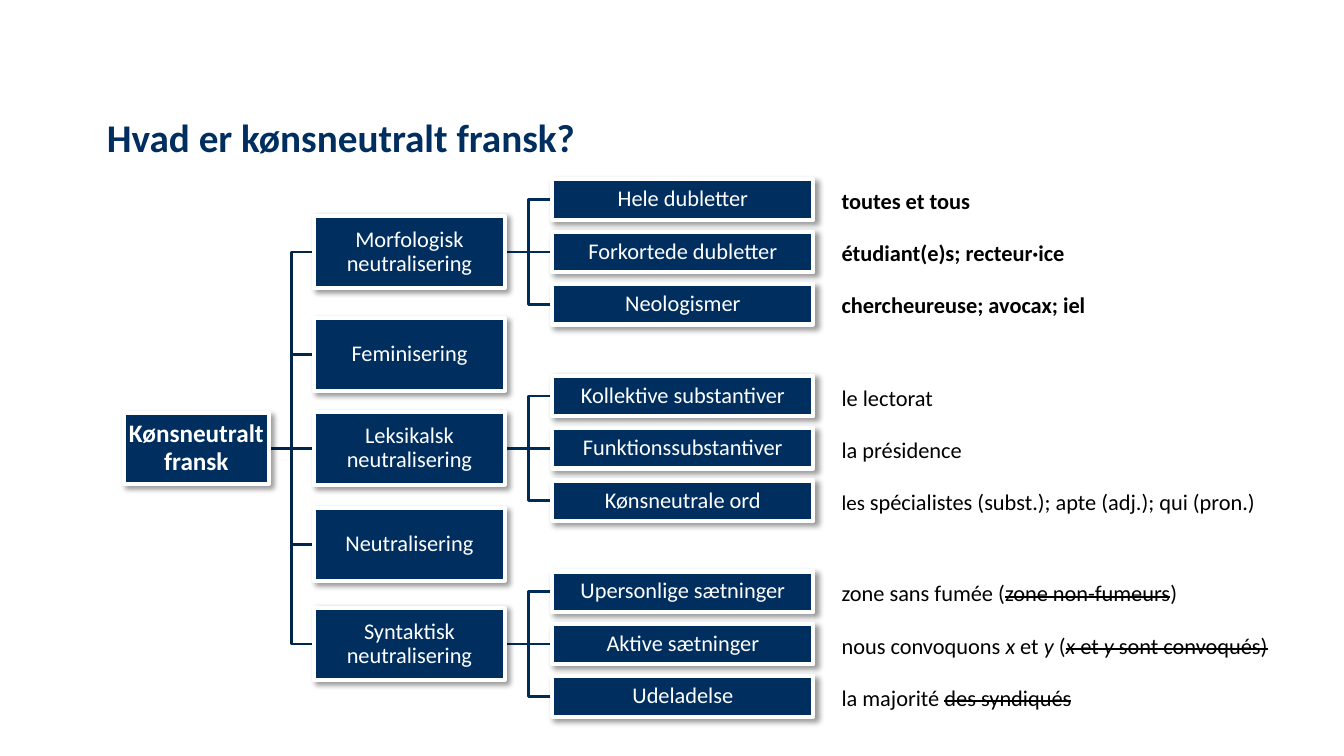
from lxml import etree
from pptx import Presentation, util as u
from pptx.dml.color import RGBColor
from pptx.enum import shapes, text
from pptx.oxml import ns

COLORS = {"navy": "002F5F", "trunk": "00264C", "twig": "002B56",
          "white": "FFFFFF", "black": "000000"}
STRUCK = {"strike": True}
ITALIC = {"italic": True}
STRUCK_ITALIC = {"strike": True, "italic": True}

# Branches: label, vertical centre in cm, leaves, examples, example format.
# An example is a list of (text, format) runs.
BRANCHES = [
    ("Morfologisk neutralisering", 6.35,
     ["Hele dubletter", "Forkortede dubletter", "Neologismer"],
     [[("toutes et tous", {})],
      [("étudiant(e)s; recteur·ice", {})],
      [("chercheureuse; avocax; iel", {})]], {"bold": True}),
    ("Feminisering", 8.93, [], [], {}),
    ("Leksikalsk neutralisering", 11.3,
     ["Kollektive substantiver", "Funktionssubstantiver", "Kønsneutrale ord"],
     [[("le lectorat", {})],
      [("la présidence", {})],
      [("les ", {"size": 15}),
       ("spécialistes (subst.); apte (adj.); qui (pron.)", {})]], {}),
    ("Neutralisering", 13.72, [], [], {}),
    ("Syntaktisk neutralisering", 16.23,
     ["Upersonlige sætninger", "Aktive sætninger", "Udeladelse"],
     [[("zone sans fumée (", {}), ("zone non-fumeurs", STRUCK), (")", {})],
      [("nous convoquons ", {}), ("x", ITALIC), (" et ", {}), ("y ", ITALIC),
       ("(", {}), ("x", STRUCK_ITALIC), (" et ", STRUCK),
       ("y", STRUCK_ITALIC), (" sont convoqués)", STRUCK)],
      [("la majorité ", {}), ("des syndiqués", STRUCK)]], {}),
]
# Tree columns: left, width, height in cm
ROOT, BRANCH, LEAF = (3.12, 3.66, 1.78), (7.92, 4.8, 1.83), (13.92, 6.58, 1.02)
LEAF_PITCH = 1.32


def rgb(name):
    return RGBColor.from_string(COLORS[name])


def write(paragraph, words, size=16, color="black", bold=False, italic=False,
          strike=False):
    run = paragraph.add_run()
    run.text = words
    font = run.font
    font.name, font.size = "Calibri", u.Pt(size)
    font.bold, font.italic = bold, italic
    font.color.rgb = rgb(color)
    if strike:
        run._r.get_or_add_rPr().set("strike", "sngStrike")


class TreeSlide:
    def __init__(self, deck):
        self.slide = deck.slides.add_slide(deck.slide_layouts[5])
        self.shapes = self.slide.shapes

    def title(self, words):
        title = self.shapes.title
        title.left, title.top = u.Cm(2.44), u.Cm(2.74)
        title.width, title.height = u.Cm(29.36), u.Cm(2.21)
        title.text_frame.vertical_anchor = text.MSO_ANCHOR.TOP
        paragraph = title.text_frame.paragraphs[0]
        paragraph.alignment = text.PP_ALIGN.LEFT
        write(paragraph, words, size=28, color="navy", bold=True)

    def node(self, words, column, middle, **style):
        left, width, height = column
        node = self.shapes.add_shape(
            shapes.MSO_SHAPE.RECTANGLE, u.Cm(left), u.Cm(middle - height / 2),
            u.Cm(width), u.Cm(height))
        node.fill.solid()
        node.fill.fore_color.rgb = rgb("navy")
        node.line.color.rgb = rgb("white")
        node.line.width = u.Pt(3)
        self.cast_shadow(node)
        frame = node.text_frame
        frame.word_wrap = True
        frame.vertical_anchor = text.MSO_ANCHOR.MIDDLE
        frame.margin_left = frame.margin_right = u.Cm(0.03)
        frame.margin_top = frame.margin_bottom = u.Cm(0.03)
        paragraph = frame.paragraphs[0]
        paragraph.alignment = text.PP_ALIGN.CENTER
        paragraph.line_spacing = 0.9
        write(paragraph, words, color="white", **style)
        return node

    def cast_shadow(self, node):
        node.shadow.inherit = False
        effects = node._element.spPr.find(ns.qn("a:effectLst"))
        shadow = etree.SubElement(
            effects, ns.qn("a:outerShdw"), blurRad="50800", dist="38100",
            dir="2700000", algn="tl", rotWithShape="0")
        shade = etree.SubElement(shadow, ns.qn("a:srgbClr"), val=COLORS["black"])
        etree.SubElement(shade, ns.qn("a:alpha"), val="40000")

    def link(self, parent, child, color):
        link = self.shapes.add_connector(shapes.MSO_CONNECTOR.ELBOW, 0, 0, 0, 0)
        link.begin_connect(parent, 3)  # right side
        link.end_connect(child, 1)  # left side
        link.line.color.rgb = rgb(color)
        link.line.width = u.Pt(2)
        etree.SubElement(link._element.spPr, ns.qn("a:effectLst"))
        # Send behind the nodes
        self.shapes._spTree.insert(2, link._element)

    def examples(self, lines, middle, **style):
        box = self.shapes.add_textbox(u.Cm(20.96), u.Cm(middle - 1.75),
                                      u.Cm(11.4), u.Cm(3.65))
        frame = box.text_frame
        frame.word_wrap = True
        for index, runs in enumerate(lines):
            paragraph = frame.add_paragraph() if index else frame.paragraphs[0]
            if index:
                paragraph.space_before = u.Pt(18)
            for words, run_style in runs:
                write(paragraph, words, **{**style, **run_style})


def main():
    deck = Presentation()
    deck.slide_width, deck.slide_height = u.Cm(33.87), u.Cm(19.05)
    tree = TreeSlide(deck)
    tree.title("Hvad er kønsneutralt fransk?")

    # Tree from root to leaves, with examples beside the leaves
    root = tree.node("Kønsneutralt fransk", ROOT, 11.3, size=18, bold=True)
    for label, middle, leaves, lines, style in BRANCHES:
        branch = tree.node(label, BRANCH, middle)
        tree.link(root, branch, "trunk")
        for index, leaf_label in enumerate(leaves):
            leaf = tree.node(leaf_label, LEAF, middle + (index - 1) * LEAF_PITCH)
            tree.link(branch, leaf, "twig")
        if lines:
            tree.examples(lines, middle, **style)

    deck.save("out.pptx")


if __name__ == "__main__":
    main()
